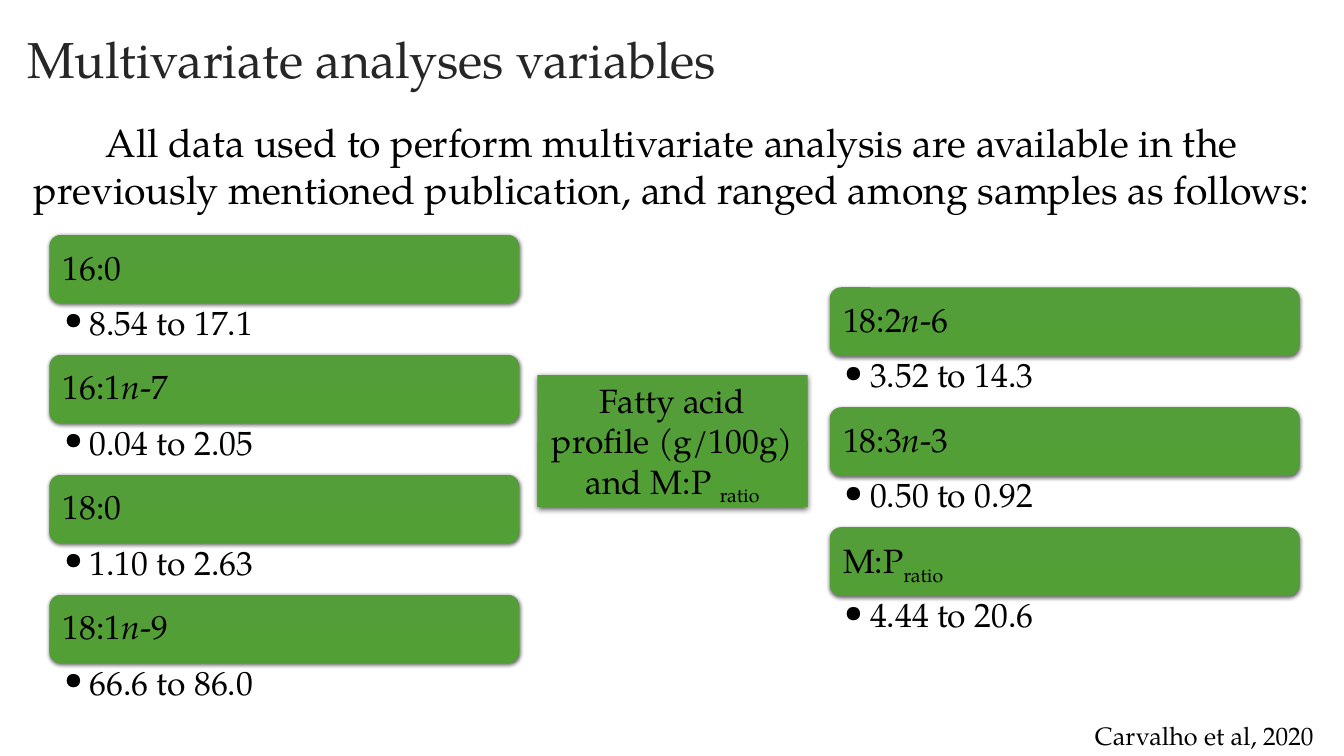
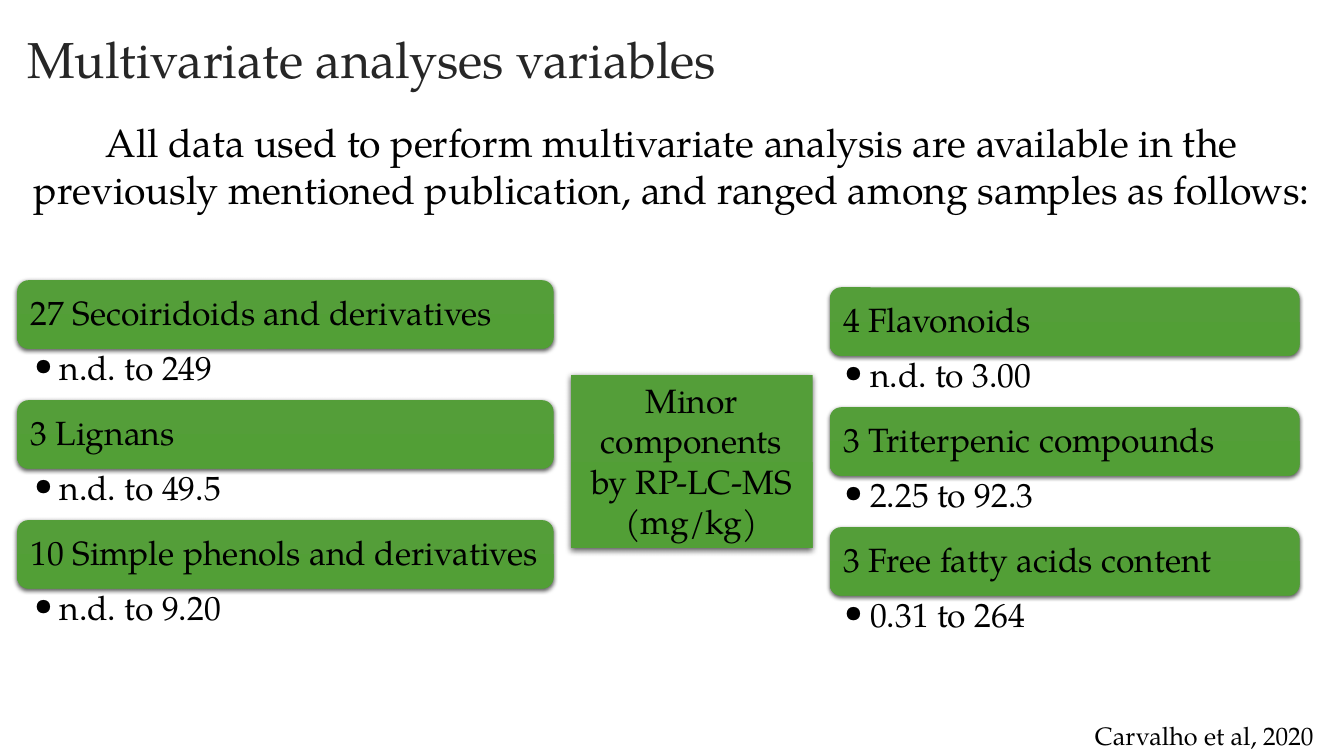
from dataclasses import dataclass

from lxml.etree import SubElement
from pptx import Presentation
from pptx.dml.color import RGBColor
from pptx.enum.shapes import MSO_SHAPE
from pptx.enum.text import MSO_ANCHOR, MSO_AUTO_SIZE, PP_ALIGN
from pptx.oxml.ns import qn
from pptx.util import Pt

PX = 9144  # EMU in one px, 100 px to the inch


@dataclass(frozen=True)
class Theme:
    font: str = "TeX Gyre Pagella"
    ink: str = "000000"
    title_ink: str = "262626"
    green_top: str = "549E39"
    green_bottom: str = "529F36"
    title_size: int = 36
    intro_size: int = 28
    label_size: int = 24
    source_size: int = 18


THEME = Theme()

TITLE = "Multivariate analyses variables"
INTRO = ("All data used to perform multivariate analysis are available in the "
         "previously mentioned publication, and ranged among samples as follows:")
SOURCE = "Carvalho et al, 2020"

BAR_HEIGHT = 68
BAR_INSET = 10  # the rounded corners add 3 px more
RANGE_HEIGHT = 51
ROW_PITCH = BAR_HEIGHT + RANGE_HEIGHT
BULLET_INDENT = 25
RANGE_INSET_SHARE = 0.032

ITALIC = "italic"
SUBSCRIPT = "subscript"


def omega(stem, position):
    """Spans of a fatty acid name with its italic n."""
    return [(stem, None), ("n", ITALIC), (f"-{position}", None)]


def ratio(lead):
    return [(lead, None), ("ratio", SUBSCRIPT)]


def plain(text):
    return [(text, None)]


FATTY_ACIDS_LEFT = [
    (plain("16:0"), "8.54 to 17.1"),
    (omega("16:1", 7), "0.04 to 2.05"),
    (plain("18:0"), "1.10 to 2.63"),
    (omega("18:1", 9), "66.6 to 86.0"),
]
FATTY_ACIDS_RIGHT = [
    (omega("18:2", 6), "3.52 to 14.3"),
    (omega("18:3", 3), "0.50 to 0.92"),
    (ratio("M:P"), "4.44 to 20.6"),
]
MINOR_LEFT = [
    (plain("27 Secoiridoids and derivatives"), "n.d. to 249"),
    (plain("3 Lignans"), "n.d. to 49.5"),
    (plain("10 Simple phenols and derivatives"), "n.d. to 9.20"),
]
MINOR_RIGHT = [
    (plain("4 Flavonoids"), "n.d. to 3.00"),
    (plain("3 Triterpenic compounds"), "2.25 to 92.3"),
    (plain("3 Free fatty acids content"), "0.31 to 264"),
]


def px(*lengths):
    return [length * PX for length in lengths]


def format_span(span, size, color=THEME.ink):
    span.font.name = THEME.font
    span.font.size = Pt(size)
    span.font.color.rgb = RGBColor.from_string(color)


def write(frame, text, size, align=PP_ALIGN.LEFT, color=THEME.ink):
    frame.word_wrap = True
    frame.text = text
    para = frame.paragraphs[0]
    para.alignment = align
    format_span(para.runs[0], size, color)
    return para


def write_spans(frame, spans, align):
    frame.word_wrap = True
    para = frame.paragraphs[0]
    para.alignment = align
    for text, style in spans:
        span = para.add_run()
        span.text = text
        format_span(span, THEME.label_size)
        if style == ITALIC:
            span.font.italic = True
        elif style == SUBSCRIPT:
            span._r.get_or_add_rPr().set("baseline", "-25000")
    return para


def set_insets(frame, left, top, right, bottom):
    (frame.margin_left, frame.margin_top,
     frame.margin_right, frame.margin_bottom) = px(left, top, right, bottom)


def add_bullet(para):
    properties = para._p.get_or_add_pPr()
    properties.set("marL", str(BULLET_INDENT * PX))
    properties.set("indent", str(-BULLET_INDENT * PX))
    SubElement(properties, qn("a:buFont"), typeface=THEME.font)
    SubElement(properties, qn("a:buChar"), char="•")


def add_shadow(shape, blur, distance):
    """Soft black shadow straight below, lengths in points."""
    shape.shadow.inherit = False
    effects = shape.element.spPr.find(qn("a:effectLst"))
    shadow = SubElement(effects, qn("a:outerShdw"), blurRad=str(Pt(blur)),
                        dist=str(Pt(distance)), dir="5400000",
                        algn="ctr", rotWithShape="0")
    color = SubElement(shadow, qn("a:srgbClr"), val="000000")
    SubElement(color, qn("a:alpha"), val="63000")


def add_green_box(shapes, kind, place, blur, distance):
    box = shapes.add_shape(kind, *px(*place))
    box.fill.gradient()
    box.fill.gradient_angle = 270
    for stop, color in zip(box.fill.gradient_stops,
                           (THEME.green_top, THEME.green_bottom)):
        stop.color.rgb = RGBColor.from_string(color)
    box.line.fill.background()
    add_shadow(box, blur, distance)
    return box


def add_text(page, place, text, size):
    box = page.shapes.add_textbox(*px(*place))
    write(box.text_frame, text, size, PP_ALIGN.CENTER)
    box.text_frame.auto_size = MSO_AUTO_SIZE.SHAPE_TO_FIT_TEXT


def add_bar(shapes, place, spans):
    bar = add_green_box(shapes, MSO_SHAPE.ROUNDED_RECTANGLE, place, 3, 1)
    frame = bar.text_frame
    set_insets(frame, BAR_INSET, BAR_INSET, BAR_INSET, BAR_INSET)
    frame.vertical_anchor = MSO_ANCHOR.MIDDLE
    write_spans(frame, spans, PP_ALIGN.LEFT).line_spacing = 0.9


def add_range(shapes, place, text):
    box = shapes.add_textbox(*px(*place))
    width = place[2]
    set_insets(box.text_frame, round(width * RANGE_INSET_SHARE), 3, 19, 3)
    para = write(box.text_frame, text, THEME.label_size)
    para.line_spacing = 0.9
    add_bullet(para)


def add_column(page, left, top, width, rows):
    """Stack of green bars, each with its bulleted range below."""
    shapes = page.shapes.add_group_shape().shapes
    for index, (spans, values) in enumerate(rows):
        bar_top = top + index * ROW_PITCH
        add_bar(shapes, (left, bar_top, width, BAR_HEIGHT), spans)
        add_range(shapes, (left, bar_top + BAR_HEIGHT, width, RANGE_HEIGHT), values)


def add_topic(page, place, spans):
    box = add_green_box(page.shapes, MSO_SHAPE.RECTANGLE, place, 4.5, 1.5)
    box.text_frame.vertical_anchor = MSO_ANCHOR.TOP
    write_spans(box.text_frame, spans, PP_ALIGN.CENTER)
    box.text_frame.auto_size = MSO_AUTO_SIZE.SHAPE_TO_FIT_TEXT


def add_page(deck):
    """Page with the shared title, introduction and source."""
    page = deck.slides.add_slide(deck.slide_layouts.get_by_name("Title Only"))
    title = page.shapes.title
    title.left, title.top, title.width, title.height = px(17, 25, 1261, 74)
    frame = title.text_frame
    frame.auto_size = MSO_AUTO_SIZE.NONE
    frame.vertical_anchor = MSO_ANCHOR.MIDDLE
    para = write(frame, TITLE, THEME.title_size, color=THEME.title_ink)
    para.line_spacing = 0.9
    add_text(page, (8, 112, 1316, 104), INTRO, THEME.intro_size)
    add_text(page, (1056, 710, 277, 40), SOURCE, THEME.source_size)
    return page


def main():
    deck = Presentation()
    deck.slide_width, deck.slide_height = px(1333, 750)

    page = add_page(deck)
    add_column(page, 823, 285, 466, FATTY_ACIDS_RIGHT)
    add_column(page, 49, 233, 466, FATTY_ACIDS_LEFT)
    add_topic(page, (533, 372, 268, 131),
              ratio("Fatty acid profile (g/100g) and M:P "))

    page = add_page(deck)
    add_column(page, 823, 285, 466, MINOR_RIGHT)
    add_column(page, 17, 278, 532, MINOR_LEFT)
    add_topic(page, (566, 372, 240, 172),
              plain("Minor components by RP-LC-MS (mg/kg)"))

    deck.save("out.pptx")


if __name__ == "__main__":
    main()
